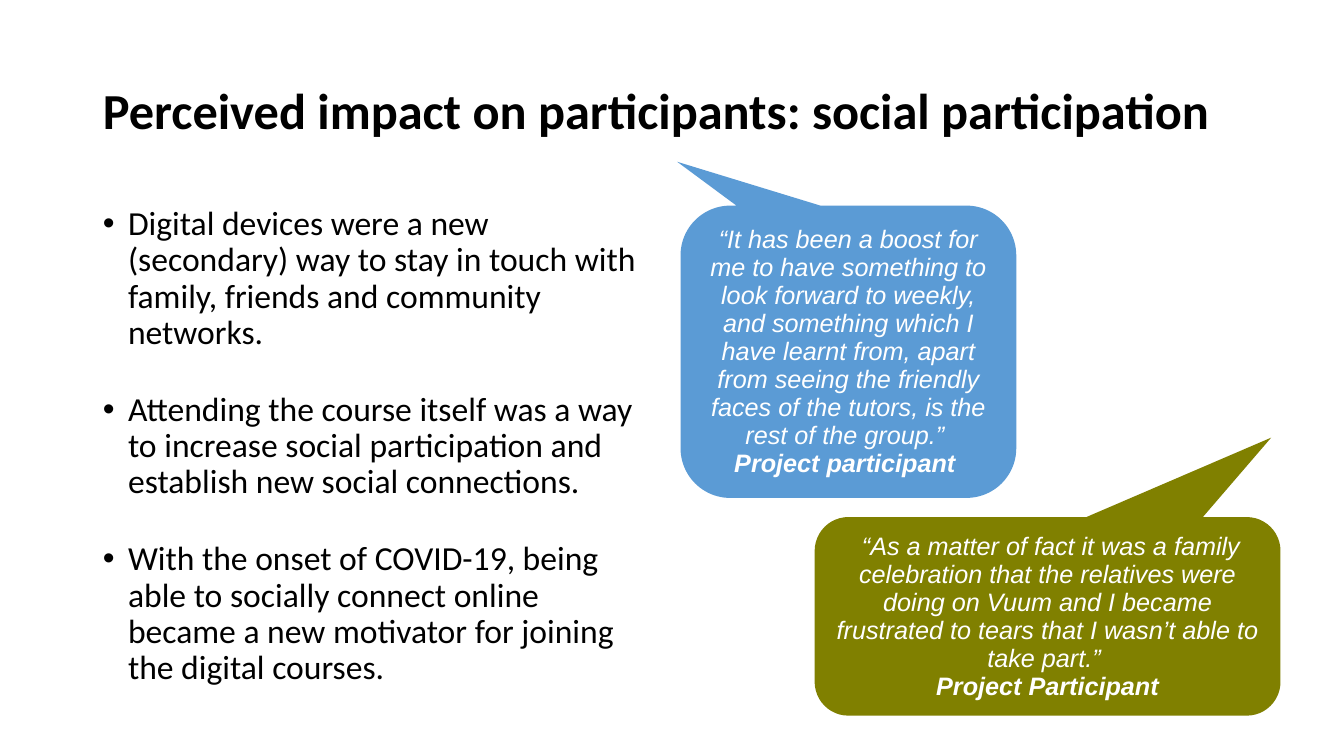
from pptx import Presentation
from pptx import util as u
from pptx.dml.color import RGBColor
from pptx.enum import shapes, text

WIDTH, HEIGHT = 13.33, 7.5
MARGIN = 0.92
BLACK, WHITE, BLUE, OLIVE = "000000", "FFFFFF", "5B9BD5", "808000"

TITLE = "Perceived impact on participants: social participation"
FINDINGS = [
    "Digital devices were a new (secondary) way to stay in touch with family, "
    "friends and community networks.",
    "Attending the course itself was a way to increase social participation "
    "and establish new social connections.",
    "With the onset of COVID-19, being able to socially connect online became "
    "a new motivator for joining the digital courses.",
]
QUOTES = [
    ((6.75, 2.04, 3.33, 2.9), (-0.51, -0.65, 0.17), BLUE,
     "“It has been a boost for me to have something to look forward to weekly, "
     "and something which I have learnt from, apart from seeing the friendly "
     "faces of the tutors, is the rest of the group.” ",
     "Project participant "),
    ((8.08, 5.13, 4.62, 1.97), (0.48, -0.9, 0.17), OLIVE,
     " “As a matter of fact it was a family celebration that the relatives were "
     "doing on Vuum and I became frustrated to tears that I wasn’t able to "
     "take part.” ",
     "Project Participant"),
]


def colour(value):
    return RGBColor.from_string(value)


def apply(target, **values):
    for name, value in values.items():
        setattr(target, name, value)


def place(shape, area):
    names = ("left", "top", "width", "height")
    apply(shape, **dict(zip(names, map(u.Inches, area))))


def write(para, words, size, font, ink, **style):
    span = para.add_run()
    span.text = words
    apply(span.font, size=u.Pt(size), name=font, **style)
    span.font.color.rgb = colour(ink)


def add_title(slide):
    title = slide.shapes.title
    place(title, (MARGIN, 0.4, WIDTH - 2 * MARGIN, 1.45))
    apply(title.text_frame, auto_size=text.MSO_AUTO_SIZE.NONE, word_wrap=True,
          vertical_anchor=text.MSO_ANCHOR.MIDDLE)
    para = title.text_frame.paragraphs[0]
    apply(para, alignment=text.PP_ALIGN.LEFT, line_spacing=0.9)
    write(para, TITLE, 36, "Calibri", BLACK, bold=True)


def add_findings(slide):
    body = slide.placeholders[1]
    place(body, (MARGIN, 2, 5.67, 4.76))
    frame = body.text_frame
    apply(frame, auto_size=text.MSO_AUTO_SIZE.NONE, word_wrap=True)
    for index, finding in enumerate(FINDINGS):
        para = frame.add_paragraph() if index else frame.paragraphs[0]
        apply(para, line_spacing=0.9, space_before=u.Pt(29 if index else 0))
        indent = para._p.get_or_add_pPr()
        indent.set("marL", str(u.Inches(0.25)))
        indent.set("indent", str(-u.Inches(0.25)))
        write(para, finding, 24, "Calibri", BLACK)


def add_quote(slide, area, pointer, fill, quote, speaker):
    kind = shapes.MSO_SHAPE.ROUNDED_RECTANGULAR_CALLOUT
    box = slide.shapes.add_shape(kind, *map(u.Inches, area))
    for index, value in enumerate(pointer):
        box.adjustments[index] = value
    box.shadow.inherit = False
    box.fill.solid()
    box.fill.fore_color.rgb = colour(fill)
    box.line.fill.background()
    frame = box.text_frame
    apply(frame, word_wrap=True, vertical_anchor=text.MSO_ANCHOR.MIDDLE)
    lines = ((frame.paragraphs[0], quote, False),
             (frame.add_paragraph(), speaker, True))
    for para, words, bold in lines:
        apply(para, alignment=text.PP_ALIGN.CENTER, line_spacing=u.Pt(20))
        write(para, words, 18, "Arial", WHITE, italic=True, bold=bold)


def main():
    deck = Presentation()
    apply(deck, slide_width=u.Inches(WIDTH), slide_height=u.Inches(HEIGHT))
    slide = deck.slides.add_slide(deck.slide_layouts[1])
    add_title(slide)
    add_findings(slide)
    for quote in QUOTES:
        add_quote(slide, *quote)
    deck.save("out.pptx")


if __name__ == "__main__":
    main()
